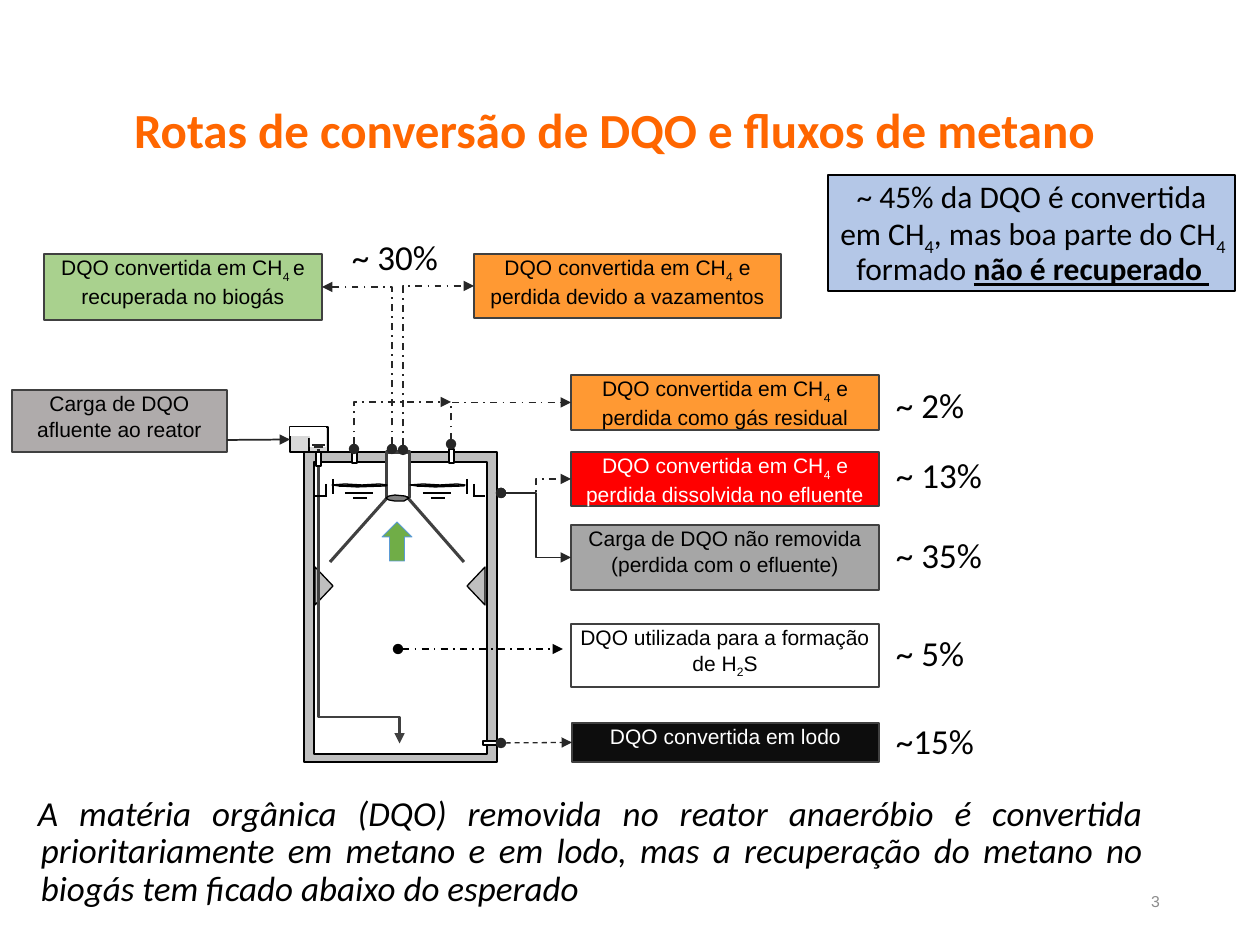
"""Build a slide on COD conversion routes and methane flows in an anaerobic reactor."""
import pptx
import pptx.util
import pptx.dml.color
import pptx.enum.dml
import pptx.enum.shapes
import pptx.enum.text
import pptx.oxml

PX = 914400 / 126
SHAPE = pptx.enum.shapes.MSO_SHAPE
CONN = pptx.enum.shapes.MSO_CONNECTOR
ALIGN = pptx.enum.text.PP_ALIGN
ANCHOR = pptx.enum.text.MSO_ANCHOR
DASH = pptx.enum.dml.MSO_LINE.DASH
DASH_DOT = pptx.enum.dml.MSO_LINE.DASH_DOT

COLORS = {
    "black": "000000", "white": "FFFFFF", "title": "FF6600", "number": "8C8C8C",
    "green": "A9D18E", "orange": "FF9933", "red": "FF0000", "gray": "A6A6A6",
    "load": "AFABAB", "sludge": "0D0D0D", "callout": "B4C7E7", "wall": "BFBFBF",
    "tank": "D8D8D8", "scum": "808080", "edge": "404040", "flow": "272727",
    "arrow": "70AD47", "arrow_edge": "5B9BD5",
}
TITLE = "Rotas de conversão de DQO e fluxos de metano"
CALLOUT = "~ 45% da DQO é convertida em CH|4|, mas boa parte do CH|4| formado ||não é recuperado "
CONCLUSION = ("A matéria orgânica (DQO) removida no reator anaeróbio é convertida prioritariamente "
              "em metano e em lodo, mas a recuperação do metano no biogás tem ficado abaixo do esperado")
LABELS = [
    ("biogas", (44, 254, 278, 66), "green", "black", "DQO convertida em CH|4 |e recuperada no biogás"),
    ("leaks", (474, 254, 307, 64), "orange", "black", "DQO convertida em CH|4| e perdida devido a vazamentos"),
    ("load", (12, 390, 215, 62), "load", "black", "Carga de DQO afluente ao reator"),
    ("residual", (571, 375, 308, 55), "orange", "black", "DQO convertida em CH|4| e perdida como gás residual"),
    ("dissolved", (571, 452, 308, 54), "red", "white", "DQO convertida em CH|4| e perdida dissolvida no efluente"),
    ("effluent", (571, 525, 308, 65), "gray", "black", "Carga de DQO não removida (perdida com o efluente)"),
    ("sulfide", (571, 624, 308, 63), "white", "black", "DQO utilizada para a formação de H|2|S"),
    ("sludge", (572, 723, 307, 39), "sludge", "white", "DQO convertida em lodo"),
]
PERCENTS = [("~ 2%", 382), ("~ 13%", 452), ("~ 35%", 532), ("~ 5%", 630), ("~15%", 718)]
ELBOWS = [
    ((392, 449), (323, 287), 0, "biogas", 3, DASH_DOT),
    ((403, 450), (473, 286), 0, "leaks", 1, DASH_DOT),
    ((354, 449), (451, 402), 0, None, None, DASH_DOT),
    ((451, 444), (571, 402), 0, "residual", 1, DASH_DOT),
    ((501, 493), (571, 479), 0.5, "dissolved", 1, DASH_DOT),
    ((501, 493), (571, 557), 0.5, "effluent", 1, None),
]
VENTS = [(352, 449, 5, 14), (449, 449, 5, 14), (316, 452, 5, 14), (483, 741, 15, 4)]
SURFACE = [(0, 42, 486), (6, 34, 493), (14, 28, 498)]
TANK_WATER = [(312, 325, 445), (314, 323, 447), (317, 320, 450)]
WEIR = [((67, 479), (67, 494)), ((74, 484), (74, 496)), ((73, 496), (85, 496))]
SCUM = [(0, 1), (13, 0), (30, 1), (47, 0), (55, 1), (54, 2), (25, 3), (7, 2)]
MOUTH = [(0, 3), (3, 1), (9, 0), (19, 1), (23, 3), (18, 6), (9, 6), (3, 5)]


def px(*values):
    return [pptx.util.Emu(round(v * PX)) for v in values]


def rgb(name):
    return pptx.dml.color.RGBColor.from_string(COLORS[name])


def paint(sp, fill, line, width):
    sp.shadow.inherit = False
    sp.fill.solid()
    sp.fill.fore_color.rgb = rgb(fill)
    if line:
        sp.line.color.rgb = rgb(line)
        sp.line.width = pptx.util.Pt(width)
    else:
        sp.line.fill.background()
    return sp


def block(s, box, fill, line="black", width=0.75, kind=SHAPE.RECTANGLE, rotation=0):
    sp = s.shapes.add_shape(kind, *px(*box))
    sp.rotation = rotation
    return paint(sp, fill, line, width)


def outline(s, x, y, points):
    first, *rest = [(x + dx, y + dy) for dx, dy in points]
    builder = s.shapes.build_freeform(*first, scale=PX)
    builder.add_line_segments(rest, close=True)
    paint(builder.convert_to_shape(), "scum", "black", 0.75)


def write(sp, text, size, color="black", font="Calibri", align=ALIGN.LEFT, spacing=0.9,
          insets=(5, 6), indent=(3, -3), anchor=ANCHOR.TOP, bold=False, italic=False):
    tf = sp.text_frame
    tf.word_wrap = True
    tf.auto_size = pptx.enum.text.MSO_AUTO_SIZE.NONE
    tf.vertical_anchor = anchor
    tf.margin_left, tf.margin_top = tf.margin_right, tf.margin_bottom = px(*insets)
    p = tf.paragraphs[0]
    p.alignment, p.line_spacing = align, spacing
    for key, value in zip(("marL", "indent"), px(*indent)):
        p._p.get_or_add_pPr().set(key, str(value))
    for i, piece in enumerate(text.split("|")):
        if piece:
            r = p.add_run()
            r.text = piece
            r.font.name, r.font.size = font, pptx.util.Pt(size)
            r.font.bold, r.font.italic = bold, italic
            r.font.color.rgb = rgb(color)
            if i % 2:
                r.font._element.set("baseline", "-25000")
    return p


def text_box(s, box, text, size, **style):
    return write(s.shapes.add_textbox(*px(*box)), text, size, **style)


def connect(s, start, end, color="black", width=0.75, kind=CONN.STRAIGHT, dash=None,
            head=None, tail=None, adj=None, rotation=0, target=None, site=None):
    c = s.shapes.add_connector(kind, *px(*start, *end))
    if target is not None:
        c.end_connect(target, site)
    c.line.color.rgb = rgb(color)
    c.line.width = pptx.util.Pt(width)
    if dash:
        c.line.dash_style = dash
    sp_pr = c._element.spPr
    if rotation:
        sp_pr.xfrm.set("rot", str(rotation * 60000))
    if adj is not None:
        guides = sp_pr.prstGeom.get_or_add_avLst()
        add_xml(guides, f'gd name="adj1" fmla="val {round(adj * 100000)}"')
    for tag, shape in (("headEnd", head), ("tailEnd", tail)):
        if shape:
            add_xml(c.line._get_or_add_ln(), f'{tag} type="{shape}"')
    add_xml(sp_pr, "effectLst")


def add_xml(parent, tag):
    ns = "http://schemas.openxmlformats.org/drawingml/2006/main"
    parent.append(pptx.oxml.parse_xml(f'<a:{tag} xmlns:a="{ns}"/>'))


def draw_reactor(s):
    block(s, (304, 452, 193, 310), "wall")
    block(s, (314, 462, 173, 292), "white")
    for x, rotation in ((457, 270), (305, 90)):
        block(s, (x, 577, 38, 18), "wall", kind=SHAPE.ISOSCELES_TRIANGLE, rotation=rotation)
    block(s, (387, 452, 23, 46), "white", "edge", 1.75)
    connect(s, (387, 498), (330, 562), "edge", 1.75)
    connect(s, (408, 498), (464, 562), "edge", 1.75)
    connect(s, (505, 557), (213, 638), "edge", 1.5, CONN.ELBOW, tail="triangle", adj=0.91, rotation=270)
    tank = block(s, (290, 427, 38, 25), "tank", width=1)
    connect(s, (309, 438), (309, 452), width=1.5, target=tank, site=2)
    for box in ((290, 427, 25, 9), (310, 427, 16, 20)):
        block(s, box, "white", None)
    for x in (339, 417):
        outline(s, x - 7, 484, SCUM)
        for x1, x2, y in SURFACE:
            connect(s, (x + x1, y), (x + x2, y))
    for side in (-1, 1):
        for (x1, y1), (x2, y2) in WEIR:
            connect(s, (400 + side * x1, y1), (400 + side * x2, y2), width=1)
    outline(s, 386, 495, MOUTH)
    for box in VENTS:
        block(s, box, "white")
    for x1, x2, y in TANK_WATER:
        connect(s, (x1, y), (x2, y), "flow")
    block(s, (382, 522, 30, 39), "arrow", "arrow_edge", 0.5, SHAPE.UP_ARROW)
    return tank


def main():
    prs = pptx.Presentation()
    prs.slide_width, prs.slide_height = px(1260, 945)
    s = prs.slides.add_slide(prs.slide_layouts[5])
    title = s.shapes.title
    title.left, title.top, title.width, title.height = px(74, 76, 1101, 87)
    write(title, TITLE, 28, "title", spacing=1.3, insets=(13, 6), indent=(50, -3), bold=True)
    tank = draw_reactor(s)
    boxes = {}
    for name, box, fill, color, text in LABELS:
        boxes[name] = block(s, box, fill, "edge")
        write(boxes[name], text, 12, color, "Arial", ALIGN.CENTER, 1, (3, 1), (0, 0))
    for start, end, adj, name, site, dash in ELBOWS:
        connect(s, start, end, "flow", 1, CONN.ELBOW, dash, "oval", "triangle", adj,
                target=boxes.get(name), site=site)
    connect(s, (227, 440), (290, 440), "flow", 1, tail="triangle", target=tank, site=1)
    connect(s, (398, 649), (563, 649), "black", 1, dash=DASH_DOT, head="oval", tail="triangle")
    connect(s, (501, 743), (572, 743), "flow", dash=DASH, head="oval", tail="triangle",
            target=boxes["sludge"], site=1)
    for text, top in PERCENTS:
        text_box(s, (891, top, 140, 52), text, 20)
    text_box(s, (329, 234, 140, 52), "~ 30% ", 20, align=ALIGN.CENTER)
    callout = block(s, (828, 175, 407, 116), "callout")
    p = write(callout, CALLOUT, 18, align=ALIGN.CENTER)
    p.runs[-1].font.bold = p.runs[-1].font.underline = True
    text_box(s, (25, 790, 1131, 129), CONCLUSION, 20, align=ALIGN.JUSTIFY, insets=(13, 6), italic=True)
    text_box(s, (890, 876, 283, 50), "3", 9, color="number", font="Arial", align=ALIGN.RIGHT,
             spacing=1, insets=(13, 6), indent=(0, 0), anchor=ANCHOR.MIDDLE)
    prs.save("out.pptx")


if __name__ == "__main__":
    main()
